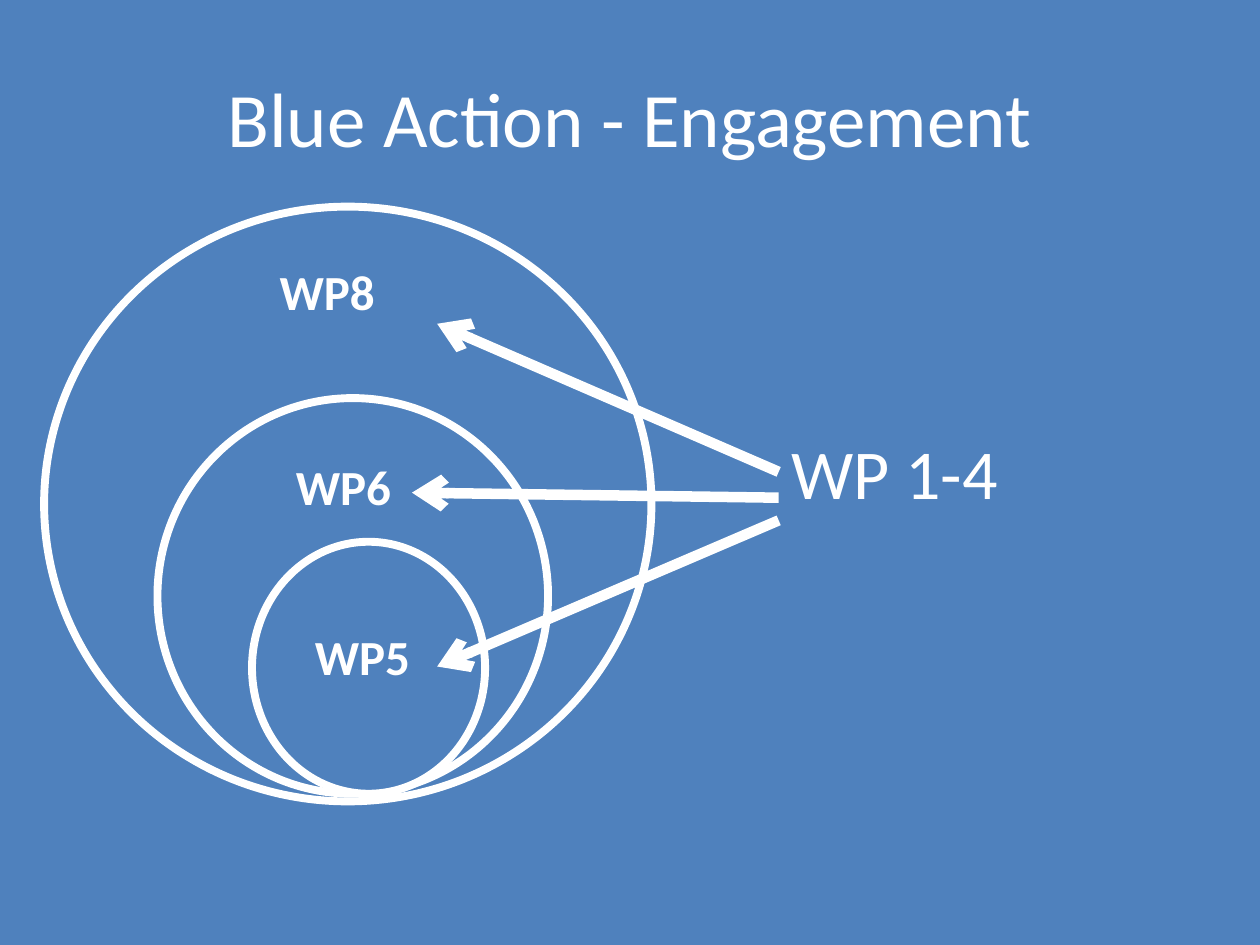
import pptx
import pptx.util
import pptx.dml.color
import pptx.enum.shapes
import pptx.enum.text
import pptx.oxml
import pptx.oxml.ns

Kind = pptx.enum.shapes
Text = pptx.enum.text


def tint(code):
    return pptx.dml.color.RGBColor.from_string(code)


class Pen:
    """Draws on one slide, with lengths in cells of a 100 by 75 grid."""

    blue, white, face = "4F81BD", "FFFFFF", "Calibri"

    def __init__(self, deck):
        self.cell = deck.slide_width / 100
        self.slide = deck.slides.add_slide(deck.slide_layouts[5])
        self.home = self.slide.shapes
        fill = self.slide.background.fill
        fill.solid()
        fill.fore_color.rgb = tint(self.blue)

    def grid(self, *spots):
        return [pptx.util.Emu(round(spot * self.cell)) for spot in spots]

    def letter(self, shape, words, size, bold=False, side=None, **form):
        frame = shape.text_frame
        frame.text = words
        for name, value in {"word_wrap": True, **form}.items():
            setattr(frame, name, value)
        line = frame.paragraphs[0]
        line.alignment = side
        font = line.runs[0].font
        looks = {"name": self.face, "size": pptx.util.Pt(size), "bold": bold}
        for name, value in looks.items():
            setattr(font, name, value)
        font.color.rgb = tint(self.white)

    def title(self, words, *spot):
        shape = self.slide.shapes.title
        for name, value in zip(("left", "top", "width", "height"), self.grid(*spot)):
            setattr(shape, name, value)
        self.letter(shape, words, 44, side=Text.PP_ALIGN.CENTER,
                    vertical_anchor=Text.MSO_ANCHOR.MIDDLE)

    def group(self):
        self.home = self.slide.shapes.add_group_shape().shapes

    def leave(self):
        self.home = self.slide.shapes

    def stroke(self, shape, width):
        shape.line.color.rgb = tint(self.white)
        shape.line.width = pptx.util.Pt(width)

    def ring(self, *spot):
        shape = self.home.add_shape(Kind.MSO_SHAPE.OVAL, *self.grid(*spot))
        shape.shadow.inherit = False
        shape.fill.solid()
        shape.fill.fore_color.rgb = tint(self.blue)
        self.stroke(shape, 4.5)

    def label(self, words, spot, size, bold=False):
        shape = self.home.add_textbox(*self.grid(*spot))
        self.letter(shape, words, size, bold,
                    auto_size=Text.MSO_AUTO_SIZE.SHAPE_TO_FIT_TEXT)
        return shape

    def arrow(self, start, end, box=None):
        shape = self.home.add_connector(Kind.MSO_CONNECTOR.STRAIGHT,
                                        *self.grid(*start, *end))
        if box is not None:
            shape.begin_connect(box, 1)
        self.stroke(shape, 6)
        space = pptx.oxml.ns.nsdecls("a")
        props = shape.element.spPr
        line = props.find(pptx.oxml.ns.qn("a:ln"))
        line.append(pptx.oxml.parse_xml(f'<a:tailEnd {space} type="arrow"/>'))
        props.append(pptx.oxml.parse_xml(f"<a:effectLst {space}/>"))


def main():
    deck = pptx.Presentation()
    deck.slide_width = pptx.util.Inches(10)
    deck.slide_height = pptx.util.Inches(7.5)
    pen = Pen(deck)
    pen.title("Blue Action - Engagement", 5, 3, 90, 12.5)

    pen.group()
    for spot in ((3.5, 16.4, 48.2, 47.2), (12.5, 31.6, 31, 31.4), (20, 43, 18.5, 20)):
        pen.ring(*spot)
    for words, left, top in (("WP5", 24, 49.2), ("WP6", 22.5, 35.7), ("WP8", 21.2, 20.3)):
        pen.label(words, (left, top, 13.5, 7.5), 28, True)
    pen.leave()

    hub = pen.label("WP 1-4", (61.8, 33.6, 40.9, 7.7), 40)
    for rise, end, box in ((37.4, (34.7, 25.7), hub),
                           (39.5, (32.7, 39.1), None),
                           (41.3, (34.7, 52.9), None)):
        pen.arrow((61.8, rise), end, box)
    deck.save("out.pptx")


if __name__ == "__main__":
    main()
